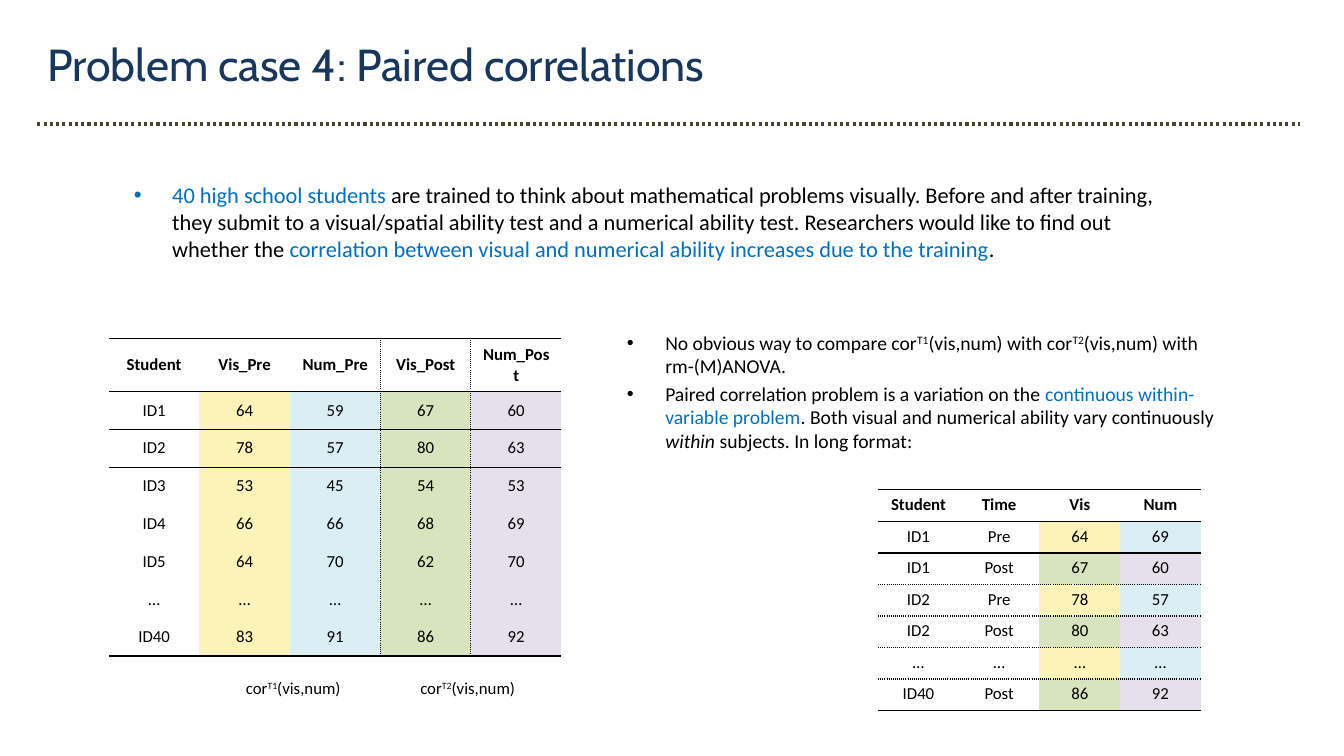
from dataclasses import dataclass

from lxml.etree import SubElement
from pptx import Presentation
from pptx.dml.color import RGBColor as Color
from pptx.enum.dml import MSO_LINE as Dash
from pptx.enum.shapes import MSO_CONNECTOR as Connector
from pptx.enum.text import MSO_ANCHOR as Anchor, PP_ALIGN as Align
from pptx.oxml.ns import qn
from pptx.slide import Slide
from pptx.util import Inches, Pt


@dataclass(frozen=True)
class Theme:
    heading_font: str = "Cabin"
    body_font: str = "Calibri"
    title: str = "17375E"
    rule: str = "4A452A"
    ink: str = "000000"
    accent: str = "0070C0"
    visual_before: str = "FBF3B7"
    number_before: str = "DBEEF4"
    visual_after: str = "D7E4BD"
    number_after: str = "E6E0EC"
    title_size: int = 32
    lead_size: int = 16
    note_size: int = 14
    small_size: int = 12
    rule_width: float = 2.25
    border_width: int = 1


THEME = Theme()
BEFORE = (THEME.visual_before, THEME.number_before)
AFTER = (THEME.visual_after, THEME.number_after)
NO_TABLE_STYLE = "{2D5ABB26-0587-4C30-8999-92F81FD0307C}"
SOLID, DOTTED = "solid", "sysDot"


def grid(units: float) -> int:
    return Inches(units / 10)


@dataclass(frozen=True)
class Area:
    column: float
    row: float
    columns: float
    rows: float

    def box(self) -> tuple[int, ...]:
        return tuple(map(grid, (self.column, self.row, self.columns, self.rows)))


@dataclass(frozen=True)
class Words:
    text: str
    color: str = THEME.ink
    bold: bool = False
    italic: bool = False
    raised: bool = False


@dataclass(frozen=True)
class TextBlock:
    area: Area
    paragraphs: list[list[Words]]
    size: int
    font: str = THEME.body_font
    bulleted: bool = False
    wrapped: bool = True


@dataclass(frozen=True)
class DataTable:
    area: Area
    rows: list[list[str]]
    fills: list[tuple[str, ...]]
    header_height: float
    row_lines: dict[int, str]
    column_lines: dict[int, str]
    anchor: Anchor


def correlation(time: str) -> list[Words]:
    return [Words("cor"), Words(time, raised=True), Words("(vis,num)")]


def add_words(paragraph, words: Words, size: int, font: str) -> None:
    run = paragraph.add_run()
    run.text = words.text
    run.font.name = font
    run.font.size = Pt(size)
    run.font.bold = words.bold
    run.font.italic = words.italic
    run.font.color.rgb = Color.from_string(words.color)
    if words.raised:
        run.font._element.set("baseline", "30000")


def add_bullet(paragraph, size: int) -> None:
    paragraph.space_before = Pt(size * 0.2)
    properties = paragraph._p.get_or_add_pPr()
    indent = Inches(0.38)
    properties.set("marL", str(indent))
    properties.set("indent", str(-indent))
    SubElement(properties, qn("a:buFont"), typeface="Arial")
    SubElement(properties, qn("a:buChar"), char="•")


def add_text(slide: Slide, block: TextBlock) -> None:
    frame = slide.shapes.add_textbox(*block.area.box()).text_frame
    frame.word_wrap = block.wrapped
    for index, sentence in enumerate(block.paragraphs):
        paragraph = frame.add_paragraph() if index else frame.paragraphs[0]
        if block.bulleted:
            add_bullet(paragraph, block.size)
        for words in sentence:
            add_words(paragraph, words, block.size, block.font)


def add_border(cell, side: str, dash: str) -> None:
    properties = cell._tc.get_or_add_tcPr()
    line = SubElement(properties, qn(f"a:ln{side}"), w=str(Pt(THEME.border_width)))
    fill = SubElement(line, qn("a:solidFill"))
    SubElement(fill, qn("a:srgbClr"), val=THEME.ink)
    SubElement(line, qn("a:prstDash"), val=dash)


def add_data_table(slide: Slide, data: DataTable) -> None:
    row_count, column_count = len(data.rows), len(data.rows[0])
    frame = slide.shapes.add_table(row_count, column_count, *data.area.box())
    table = frame.table
    table.first_row = table.horz_banding = False
    next(frame.element.iter(qn("a:tableStyleId"))).text = NO_TABLE_STYLE
    body_height = (data.area.rows - data.header_height) / (row_count - 1)
    for column in table.columns:
        column.width = grid(data.area.columns / column_count)
    for r, values in enumerate(data.rows):
        table.rows[r].height = grid(body_height if r else data.header_height)
        fills = data.fills[(r - 1) % len(data.fills)] if r else ()
        first_filled = column_count - len(fills)
        for c, value in enumerate(values):
            cell = table.cell(r, c)
            cell.vertical_anchor = data.anchor
            paragraph = cell.text_frame.paragraphs[0]
            paragraph.alignment = Align.CENTER
            add_words(paragraph, Words(value, bold=r == 0), THEME.small_size, THEME.body_font)
            edges = (("L", data.column_lines, c), ("R", data.column_lines, c + 1),
                     ("T", data.row_lines, r), ("B", data.row_lines, r + 1))
            for side, lines, edge in edges:
                if edge in lines:
                    add_border(cell, side, lines[edge])
            if c >= first_filled:
                cell.fill.solid()
                cell.fill.fore_color.rgb = Color.from_string(fills[c - first_filled])
            else:
                cell.fill.background()


def add_rule(slide: Slide, left: float, right: float, row: float) -> None:
    rule = slide.shapes.add_connector(
        Connector.STRAIGHT, grid(left), grid(row), grid(right), grid(row))
    rule.line.color.rgb = Color.from_string(THEME.rule)
    rule.line.width = Pt(THEME.rule_width)
    rule.line.dash_style = Dash.ROUND_DOT
    SubElement(rule.element.spPr, qn("a:effectLst"))


TEXTS = [
    TextBlock(Area(12.3, 17.5, 107.1, 53.9), [[
        Words("40 high school students ", THEME.accent),
        Words("are trained to think about mathematical problems visually. Before and after "
              "training, they submit to a visual/spatial ability test and a numerical ability "
              "test. Researchers would like to find out whether the "),
        Words("correlation between visual and numerical ability increases due to the training",
              THEME.accent),
        Words(".")]], THEME.lead_size, bulleted=True),
    TextBlock(Area(3.7, 3.2, 116.5, 6.4),
              [[Words("Problem case 4: Paired correlations", THEME.title)]],
              THEME.title_size, THEME.heading_font),
    TextBlock(Area(61.2, 32.3, 61.4, 15.5), [
        [Words("No obvious way to compare "), *correlation("T1"), Words(" with "),
         *correlation("T2"), Words(" with rm-(M)ANOVA.")],
        [Words("Paired correlation problem is a variation on the "),
         Words("continuous within-variable problem", THEME.accent),
         Words(". Both visual and numerical ability vary continuously "),
         Words("within ", italic=True), Words("subjects. In long format:")],
    ], THEME.note_size, bulleted=True),
    *(TextBlock(Area(column, 66.7, 11.5, 3), [correlation(time)], THEME.small_size, wrapped=False)
      for column, time in ((23.4, "T1"), (40.7, "T2"))),
]

WIDE_ROWS = """Student Vis_Pre Num_Pre Vis_Post Num_Post
ID1 64 59 67 60
ID2 78 57 80 63
ID3 53 45 54 53
ID4 66 66 68 69
ID5 64 70 62 70
… … … … …
ID40 83 91 86 92"""

LONG_ROWS = """Student Time Vis Num
ID1 Pre 64 69
ID1 Post 67 60
ID2 Pre 78 57
ID2 Post 80 63
… … … …
ID40 Post 86 92"""


def split_rows(text: str) -> list[list[str]]:
    return [line.split() for line in text.splitlines()]


TABLES = [
    DataTable(Area(10.8, 33.6, 44.9, 31.5), split_rows(WIDE_ROWS), [BEFORE + AFTER], 5.25,
              dict.fromkeys((0, 1, 2, 8), SOLID), dict.fromkeys((3, 4), DOTTED), Anchor.MIDDLE),
    DataTable(Area(87.1, 48.6, 32, 21.9), split_rows(LONG_ROWS), [BEFORE, AFTER], 3.13,
              dict.fromkeys((0, 1, 2, 7), SOLID) | dict.fromkeys(range(3, 7), DOTTED),
              {}, Anchor.TOP),
]


def main() -> None:
    presentation = Presentation()
    presentation.slide_width, presentation.slide_height = grid(133.3), grid(75)
    slide = presentation.slides.add_slide(presentation.slide_layouts[6])
    for block in TEXTS:
        add_text(slide, block)
    add_rule(slide, 3.7, 128.9, 12.3)
    for data in TABLES:
        add_data_table(slide, data)
    presentation.save("out.pptx")


if __name__ == "__main__":
    main()
